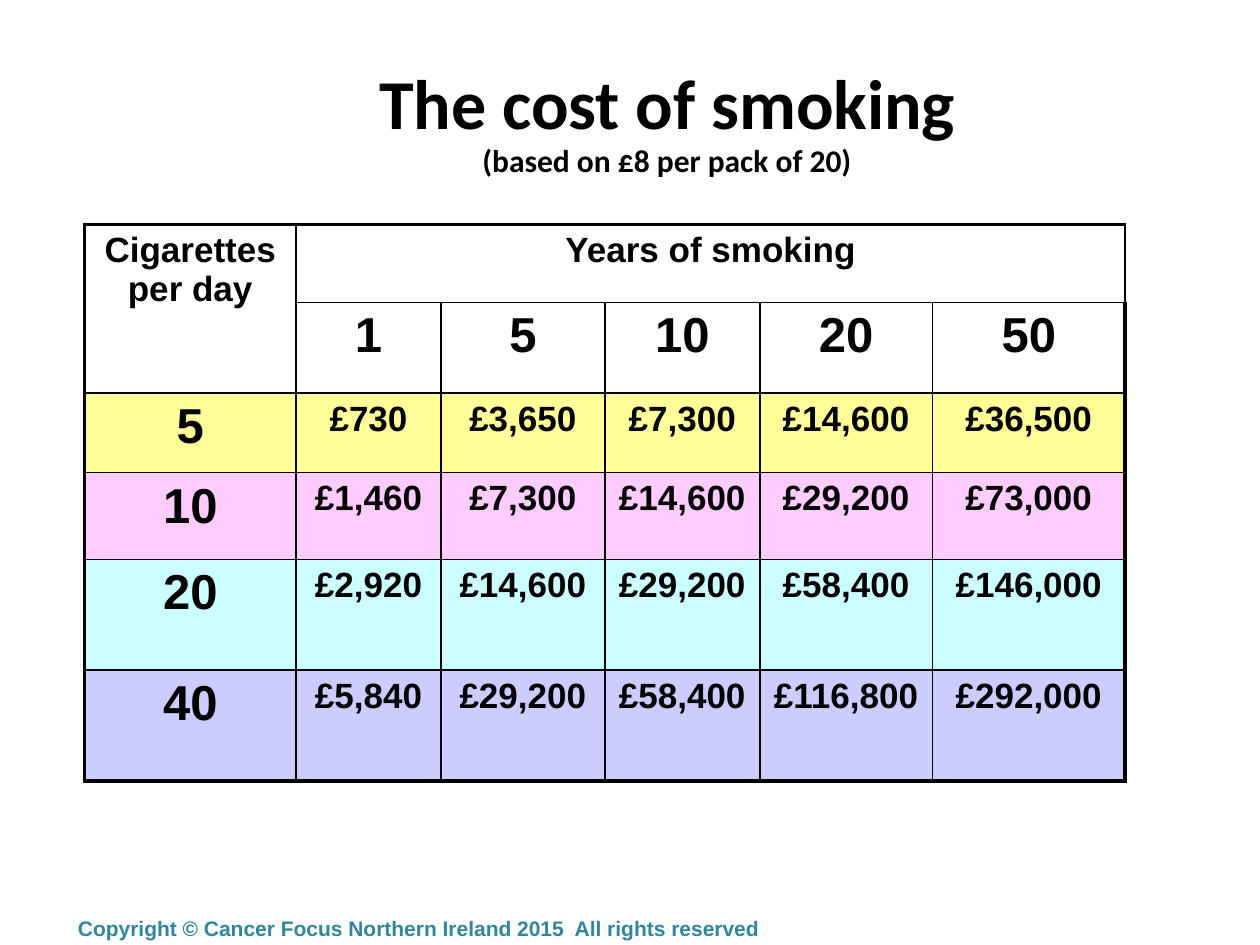
from typing import NamedTuple

from lxml.etree import SubElement
from pptx import Presentation
from pptx.dml.color import RGBColor
from pptx.enum.text import MSO_ANCHOR, MSO_AUTO_SIZE, PP_ALIGN
from pptx.oxml.ns import qn
from pptx.util import Inches, Pt

COLORS = {
    "black": "000000", "white": "FFFFFF", "teal": "31859C",
    "yellow": "FFFF99", "pink": "FFCCFF", "aqua": "CCFFFF", "lilac": "CCCCFF",
}
PACK_PRICE, PACK_SIZE, DAYS = 8, 20, 365
YEARS = [1, 5, 10, 20, 50]
COL_WIDTHS = [1.68, 1.15, 1.3, 1.23, 1.37, 1.53]
HEADER_HEIGHTS = [0.62, 0.72]
THIN, THICK = 1, 2.25


class Smoker(NamedTuple):
    per_day: int
    color: str
    height: float


SMOKERS = [
    Smoker(5, "yellow", 0.63),
    Smoker(10, "pink", 0.69),
    Smoker(20, "aqua", 0.88),
    Smoker(40, "lilac", 0.88),
]
ROW_HEIGHTS = HEADER_HEIGHTS + [smoker.height for smoker in SMOKERS]


def add_run(p, text: str, size: float, font: str = "Arial", color: str = "black") -> None:
    r = p.add_run()
    r.text = text
    r.font.name, r.font.size, r.font.bold = font, Pt(size), True
    r.font.color.rgb = RGBColor.from_string(COLORS[color])


def set_borders(cell, row: int, col: int) -> None:
    """Thick lines round the table, thin lines inside it."""
    outer = {
        "L": col == 0, "R": col == len(COL_WIDTHS) - 1,
        "T": row == 0, "B": row == len(ROW_HEIGHTS) - 1,
    }
    tc_pr = cell._tc.get_or_add_tcPr()
    for i, (side, is_outer) in enumerate(outer.items()):
        ln = SubElement(tc_pr, qn(f"a:ln{side}"), w=str(Pt(THICK if is_outer else THIN)))
        fill = SubElement(ln, qn("a:solidFill"))
        SubElement(fill, qn("a:srgbClr"), val=COLORS["black"])
        tc_pr.insert(i, ln)


def fill_cell(cell, text: str, size: float) -> None:
    p = cell.text_frame.paragraphs[0]
    p.alignment = PP_ALIGN.CENTER
    add_run(p, text, size)


def add_cost_table(s) -> None:
    table = s.shapes.add_table(
        len(ROW_HEIGHTS), len(COL_WIDTHS), Inches(0.67), Inches(1.78),
        Inches(sum(COL_WIDTHS)), Inches(sum(ROW_HEIGHTS))).table
    table.first_row = table.horz_banding = False
    for column, width in zip(table.columns, COL_WIDTHS):
        column.width = Inches(width)
    row_colors = ["white"] * len(HEADER_HEIGHTS) + [smoker.color for smoker in SMOKERS]
    for i, (row, height) in enumerate(zip(table.rows, ROW_HEIGHTS)):
        row.height = Inches(height)
        for j, cell in enumerate(row.cells):
            cell.fill.solid()
            cell.fill.fore_color.rgb = RGBColor.from_string(COLORS[row_colors[i]])
            set_borders(cell, i, j)

    # Headers
    table.cell(0, 0).merge(table.cell(1, 0))
    table.cell(0, 1).merge(table.cell(0, len(YEARS)))
    fill_cell(table.cell(0, 0), "Cigarettes per day", 20)
    fill_cell(table.cell(0, 1), "Years of smoking", 20)
    for j, years in enumerate(YEARS, 1):
        fill_cell(table.cell(1, j), str(years), 28)

    # Costs follow from the price of a pack
    for i, smoker in enumerate(SMOKERS, len(HEADER_HEIGHTS)):
        fill_cell(table.cell(i, 0), str(smoker.per_day), 28)
        yearly = smoker.per_day * PACK_PRICE * DAYS // PACK_SIZE
        for j, years in enumerate(YEARS, 1):
            fill_cell(table.cell(i, j), f"£{yearly * years:,}", 20)


def add_title(s) -> None:
    title = s.shapes.title
    title.left, title.top = Inches(0.59), Inches(0.36)
    title.width, title.height = Inches(9.41), Inches(1.8)
    tf = title.text_frame
    tf.word_wrap, tf.auto_size = True, MSO_AUTO_SIZE.NONE
    tf.vertical_anchor, tf.margin_top = MSO_ANCHOR.TOP, Inches(0.19)
    p = tf.paragraphs[0]
    p.alignment, p.line_spacing = PP_ALIGN.CENTER, 0.9
    add_run(p, "The cost of smoking", 40, "Calibri")
    p.add_line_break()
    add_run(p, "(based on £8 per pack of 20)", 18, "Calibri")


def add_copyright(s) -> None:
    tf = s.shapes.add_textbox(Inches(0.52), Inches(7.22), Inches(9.28), Inches(0.56)).text_frame
    tf.word_wrap = True
    add_run(tf.paragraphs[0],
            "Copyright © Cancer Focus Northern Ireland 2015  All rights reserved",
            12, color="teal")


def main() -> None:
    prs = Presentation()
    prs.slide_width, prs.slide_height = Inches(10), Inches(7.5)
    s = prs.slides.add_slide(prs.slide_layouts[5])
    add_title(s)
    add_cost_table(s)
    add_copyright(s)
    prs.save("out.pptx")


if __name__ == "__main__":
    main()
